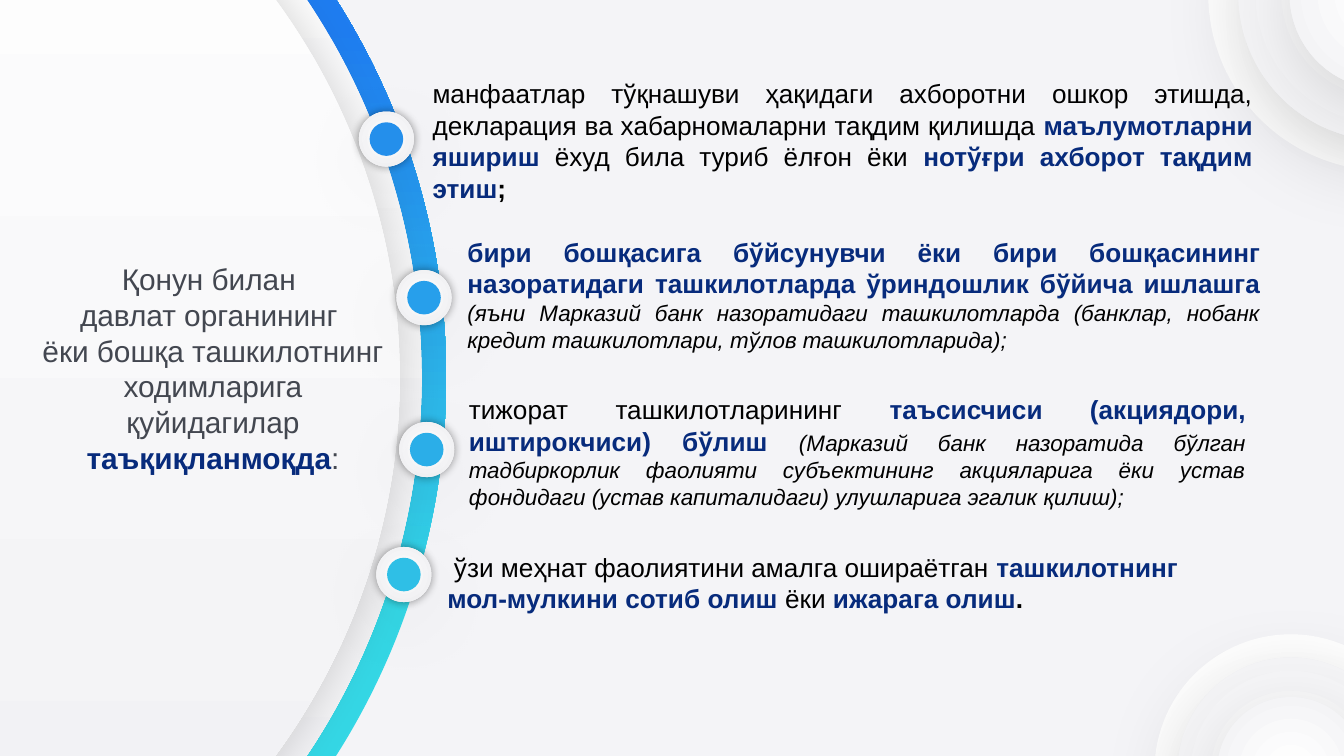
from collections import namedtuple

from lxml.etree import SubElement
from pptx import Presentation
from pptx.dml.color import RGBColor
from pptx.enum.shapes import MSO_SHAPE as Preset
from pptx.enum.text import MSO_AUTO_SIZE as AutoSize, PP_ALIGN as Align
from pptx.oxml.ns import qn
from pptx.util import Inches, Pt

WIDTH = Inches(10)
HEIGHT = WIDTH * 9 // 16
CELL = WIDTH // 10

WHITE = RGBColor(0xFF, 0xFF, 0xFF)
MIST = RGBColor(0xF0, 0xF0, 0xF3)
BACKDROP = RGBColor(0xF4, 0xF4, 0xF7)
BLACK = RGBColor(0, 0, 0)
NAVY = RGBColor(0x07, 0x2B, 0x7C)
SLATE = RGBColor(0x43, 0x47, 0x50)
AQUA = RGBColor(0x35, 0xD7, 0xE5)
AZURE = RGBColor(0x1F, 0x7D, 0xF0)

Box = namedtuple("Box", "left top width height")
Shadow = namedtuple("Shadow", "opacity blur distance angle")
Style = namedtuple("Style", "size color bold italic", defaults=(False, False))

SOFT = Shadow(15, 45, 11.2, 85)
HALO = Shadow(16, 27, 0, 0)
RIM = Shadow(40, 5, 0, 0)

INTRO = Style(16, SLATE)
BAN = Style(16, NAVY, True)
PLAIN = Style(14, BLACK)
KEY = Style(14, NAVY, True)
STOP = Style(14, BLACK, True)
NOTE = Style(12, BLACK, False, True)

HEADING = [
    [("Қонун билан ", INTRO)],
    [("давлат органининг ", INTRO)],
    [("ёки бошқа ташкилотнинг ходимларига қуйидагилар ", INTRO),
     ("таъқиқланмоқда", BAN), (":", INTRO)],
]

ITEMS = [
    (Box(3.12, 0.53, 6.3, 1.04), Align.JUSTIFY, 0, [
        ("манфаатлар тўқнашуви ҳақидаги ахборотни ошкор этишда, "
         "декларация ва хабарномаларни тақдим қилишда ", PLAIN),
        ("маълумотларни яшириш ", KEY), ("ёхуд била туриб ёлғон ёки ", PLAIN),
        ("нотўғри ахборот тақдим этиш", KEY), (";", STOP)]),
    (Box(3.38, 1.71, 6.1, 0.98), Align.JUSTIFY, 0, [
        ("бири бошқасига бўйсунувчи ёки бири бошқасининг назоратидаги "
         "ташкилотларда ўриндошлик бўйича ишлашга ", KEY),
        ("(яъни Марказий банк назоратидаги ташкилотларда (банклар, нобанк "
         "кредит ташкилотлари, тўлов ташкилотларида);", NOTE)]),
    (Box(3.39, 2.88, 5.98, 0.98), Align.JUSTIFY, 0, [
        ("тижорат ташкилотларининг ", PLAIN),
        ("таъсисчиси (акциядори, иштирокчиси) бўлиш ", KEY),
        ("(Марказий банк назоратида бўлган тадбиркорлик фаолияти субъектининг "
         "акцияларига ёки устав фондидаги (устав капиталидаги) улушларига "
         "эгалик қилиш);", NOTE)]),
    (Box(3.23, 4.05, 6.1, 0.57), Align.LEFT, 0.05, [
        ("ўзи меҳнат фаолиятини амалга ошираётган ", PLAIN),
        ("ташкилотнинг \nмол-мулкини сотиб олиш ", KEY), ("ёки ", PLAIN),
        ("ижарага олиш", KEY), (".", STOP)]),
]

MARKERS = [
    (2.67, 0.83, RGBColor(0x24, 0x8F, 0xEB)),
    (2.95, 2.01, RGBColor(0x27, 0x9F, 0xEB)),
    (2.97, 3.14, RGBColor(0x2B, 0xAE, 0xE8)),
    (2.8, 4.07, RGBColor(0x2F, 0xBF, 0xE6)),
]


def scaled(box):
    return [round(length * CELL) for length in box]


def centred(box, across, down=None):
    width, height = box.width * across, box.height * (down or across)
    return Box(box.left + (box.width - width) / 2,
               box.top + (box.height - height) / 2, width, height)


def add_disc(shapes, box, shadow=None):
    disc = shapes.add_shape(Preset.OVAL, *scaled(box))
    disc.line.fill.background()
    disc.shadow.inherit = False
    if shadow:
        effects = disc._element.spPr.find(qn("a:effectLst"))
        outer = SubElement(effects, qn("a:outerShdw"), blurRad=str(Pt(shadow.blur)),
                           dist=str(Pt(shadow.distance)), dir=str(shadow.angle * 60000),
                           algn="ctr", rotWithShape="0")
        tint = SubElement(outer, qn("a:srgbClr"), val=str(BLACK))
        SubElement(tint, qn("a:alpha"), val=str(shadow.opacity * 1000))
    return disc


def paint_solid(disc, color):
    disc.fill.solid()
    disc.fill.fore_color.rgb = color


def paint_linear(disc, angle, *stops):
    disc.fill.gradient()
    disc.fill.gradient_angle = angle
    for stop, (position, color) in zip(disc.fill.gradient_stops, stops):
        stop.position = position
        stop.color.rgb = color


def paint_radial(disc):
    paint_linear(disc, 0, (0, WHITE), (1, MIST))
    gradient = disc._element.spPr.find(qn("a:gradFill"))
    gradient.remove(gradient.find(qn("a:lin")))
    circle = SubElement(gradient, qn("a:path"), path="circle")
    SubElement(circle, qn("a:fillToRect"), l="50000", t="50000", r="50000", b="50000")


def add_corner_rings(page, box):
    paint_solid(add_disc(page.shapes, box), WHITE)
    for share in (0.83, 0.54):
        paint_radial(add_disc(page.shapes, centred(box, share), SOFT))


def add_dial(page, box):
    paint_linear(add_disc(page.shapes, box), 90, (0.34, AQUA), (0.75, AZURE))
    for across, down, shadow in ((0.965, 0.965, None), (0.934, 0.918, HALO)):
        disc = add_disc(page.shapes, centred(box, across, down), shadow)
        paint_linear(disc, 270, (0, WHITE), (1, MIST))


def add_marker(page, box, color):
    group = page.shapes.add_group_shape()
    paint_radial(add_disc(group.shapes, box, RIM))
    paint_solid(add_disc(group.shapes, centred(box, 0.61), SOFT), color)


def add_span(para, text, style):
    span = para.add_run()
    span.text = text
    span.font.name = "Arial"
    span.font.size = Pt(style.size)
    span.font.color.rgb = style.color
    span.font.bold = style.bold
    span.font.italic = style.italic


def add_text(page, box, paragraphs, align, indent=0):
    frame = page.shapes.add_textbox(*scaled(box)).text_frame
    frame.word_wrap = True
    frame.auto_size = AutoSize.SHAPE_TO_FIT_TEXT
    for index, spans in enumerate(paragraphs):
        para = frame.add_paragraph() if index else frame.paragraphs[0]
        para.alignment = align
        if indent:
            para._p.get_or_add_pPr().set("indent", str(round(indent * CELL)))
        for text, style in spans:
            for row, line in enumerate(text.split("\n")):
                if row:
                    para.add_line_break()
                add_span(para, line, style)


def main():
    deck = Presentation()
    deck.slide_width, deck.slide_height = WIDTH, HEIGHT
    page = deck.slides.add_slide(deck.slide_layouts[6])
    page.background.fill.solid()
    page.background.fill.fore_color.rgb = BACKDROP

    add_corner_rings(page, Box(8.59, 4.72, 2.03, 2.03))
    add_corner_rings(page, Box(8.99, -1.36, 2.63, 2.63))
    add_dial(page, Box(-7.16, -2.43, 10.48, 10.48))
    add_text(page, Box(0.21, 1.89, 2.75, 1.99), HEADING, Align.CENTER)
    for box, align, indent, spans in ITEMS:
        add_text(page, box, [spans], align, indent)
    for left, top, color in MARKERS:
        add_marker(page, Box(left, top, 0.41, 0.41), color)
    deck.save("out.pptx")


if __name__ == "__main__":
    main()
